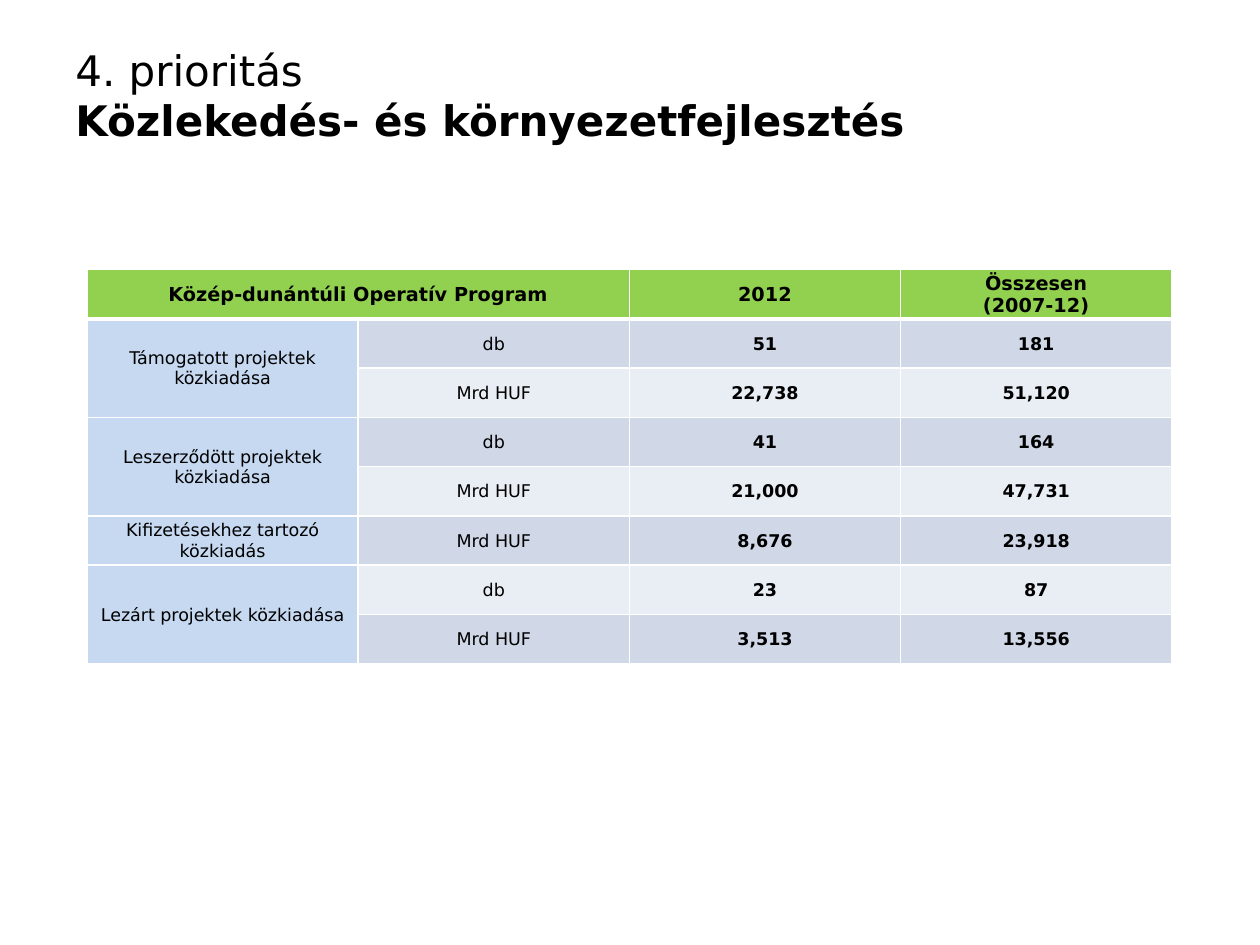
import pptx
import pptx.dml.color
import pptx.enum.text
import pptx.oxml
import pptx.oxml.ns
import pptx.util
from pptx.util import Inches

FONT = "DejaVu Sans"
COLORS = {
    "text": "000000",
    "border": "FFFFFF",
    "header": "92D050",
    "label": "C6D9F1",
    "odd_row": "D0D8E8",
    "even_row": "E9EDF4",
}
ROWS = [
    ["Közép-dunántúli Operatív Program", "", "2012", "Összesen\n(2007-12)"],
    ["Támogatott projektek közkiadása", "db", "51", "181"],
    ["", "Mrd HUF", "22,738", "51,120"],
    ["Leszerződött projektek közkiadása", "db", "41", "164"],
    ["", "Mrd HUF", "21,000", "47,731"],
    ["Kifizetésekhez tartozó közkiadás", "Mrd HUF", "8,676", "23,918"],
    ["Lezárt projektek közkiadása", "db", "23", "87"],
    ["", "Mrd HUF", "3,513", "13,556"],
]
MERGES = [((0, 0), (0, 1)), ((1, 0), (2, 0)), ((3, 0), (4, 0)), ((6, 0), (7, 0))]


def style_font(font, size, bold):
    font.name = FONT
    font.size = pptx.util.Pt(size)
    font.bold = bold
    font.color.rgb = pptx.dml.color.RGBColor.from_string(COLORS["text"])


def add_borders(cell, bottom_width):
    """Draw all four cell borders 1 pt wide, except the bottom one as given."""
    properties = cell._tc.get_or_add_tcPr()
    for side, width in (("L", 1), ("R", 1), ("T", 1), ("B", bottom_width)):
        properties.append(pptx.oxml.parse_xml(
            f'<a:ln{side} {pptx.oxml.ns.nsdecls("a")} w="{pptx.util.Pt(width)}">'
            f'<a:solidFill><a:srgbClr val="{COLORS["border"]}"/></a:solidFill>'
            f'</a:ln{side}>'))


presentation = pptx.Presentation()
presentation.slide_width = Inches(10)
presentation.slide_height = Inches(7.5)
slide = presentation.slides.add_slide(presentation.slide_layouts[6])

# Title
title = slide.shapes.add_textbox(Inches(0.5), Inches(0.3), Inches(9.5), Inches(1.25))
title.text_frame.word_wrap = True
paragraph = title.text_frame.paragraphs[0]
priority = paragraph.add_run()
priority.text = "4. prioritás"
paragraph.add_line_break()
subject = paragraph.add_run()
subject.text = "Közlekedés- és környezetfejlesztés"
style_font(priority.font, 24, False)
style_font(subject.font, 24, True)

# Table
table = slide.shapes.add_table(
    len(ROWS), len(ROWS[0]), Inches(0.69), Inches(2.14), Inches(8.61), Inches(3.13)
).table
for row_index, texts in enumerate(ROWS):
    is_header = row_index == 0
    for column_index, text in enumerate(texts):
        cell = table.cell(row_index, column_index)
        cell.margin_left = cell.margin_right = cell.margin_top = Inches(0.01)
        cell.margin_bottom = 0
        cell.vertical_anchor = pptx.enum.text.MSO_ANCHOR.MIDDLE
        cell.text = text
        for paragraph in cell.text_frame.paragraphs:
            paragraph.alignment = pptx.enum.text.PP_ALIGN.CENTER
            style_font(paragraph.font, 11 if is_header else 10,
                       is_header or column_index >= 2)

        add_borders(cell, 3 if is_header else 1)
        if is_header:
            fill = "header"
        elif column_index == 0:
            fill = "label"
        else:
            fill = "odd_row" if row_index % 2 else "even_row"
        cell.fill.solid()
        cell.fill.fore_color.rgb = pptx.dml.color.RGBColor.from_string(COLORS[fill])

for first, last in MERGES:
    table.cell(*first).merge(table.cell(*last))

presentation.save("out.pptx")
